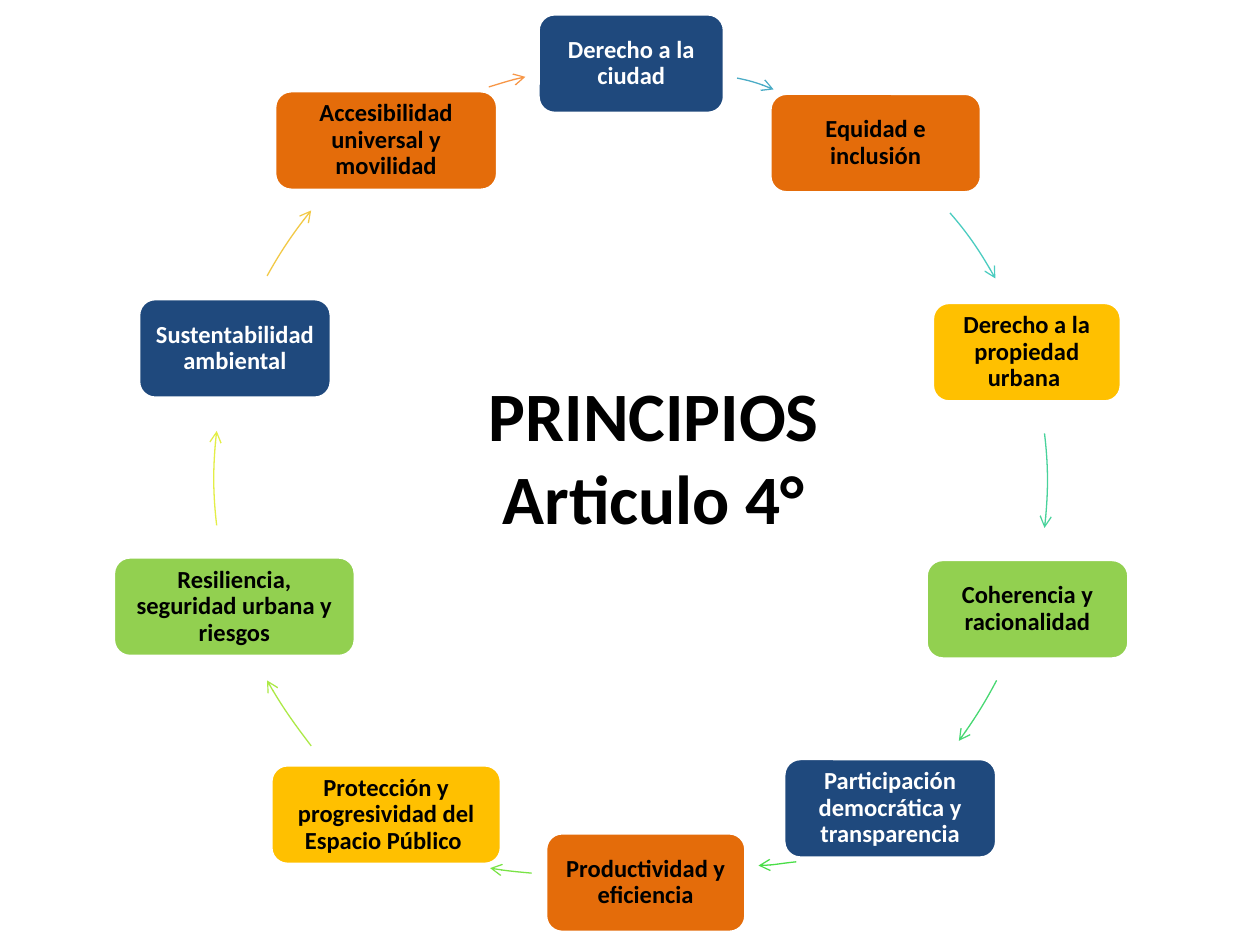
from lxml import etree
from pptx import Presentation
from pptx import util as u
from pptx.dml.color import RGBColor
from pptx.enum import shapes, text
from pptx.oxml.ns import qn

FONT = "Calibri"
BLUE, ORANGE, YELLOW, GREEN = "1F497D", "E46C0A", "FFC000", "92D050"
BLACK, WHITE = "000000", "FFFFFF"
CARD_HEIGHT = 0.79
RING_SIZE = 6.61

# label, fill, left, top, width
PRINCIPLES = [
    ("Derecho a la ciudad", BLUE, 4.27, 0.11, 1.48),
    ("Equidad e inclusión", ORANGE, 6.11, 0.74, 1.68),
    ("Derecho a la propiedad urbana ", YELLOW, 7.4, 2.4, 1.5),
    ("Coherencia y racionalidad", GREEN, 7.35, 4.44, 1.61),
    ("Participación democrática y transparencia", BLUE, 6.22, 6.02, 1.69),
    ("Productividad y eficiencia", ORANGE, 4.33, 6.61, 1.59),
    ("Protección y progresividad del Espacio Público ", YELLOW, 2.15, 6.07, 1.83),
    ("Resiliencia, seguridad urbana y riesgos", GREEN, 0.9, 4.42, 1.92),
    ("Sustentabilidad ambiental", BLUE, 1.1, 2.37, 1.53),
    ("Accesibilidad universal y movilidad", ORANGE, 2.18, 0.72, 1.77),
]

# colour, corner of the ring, then start, two control points and end on the slide
ARROWS = [
    ("4BACC6", (1.72, 0.52), (5.85, 0.62), (5.95, 0.64), (6.05, 0.67), (6.14, 0.71)),
    ("4ACCC0", (1.71, 0.52), (7.54, 1.69), (7.68, 1.85), (7.8, 2.03), (7.9, 2.21)),
    ("48D29B", (1.7, 0.53), (8.29, 3.44), (8.32, 3.69), (8.32, 3.94), (8.29, 4.19)),
    ("47D872", (1.67, 0.57), (7.91, 5.4), (7.82, 5.57), (7.72, 5.73), (7.61, 5.88)),
    ("49DE47", (2.46, 0.27), (6.32, 6.84), (6.22, 6.85), (6.12, 6.87), (6.02, 6.87)),
    ("79E346", (1.21, 0.33), (4.22, 6.93), (4.11, 6.92), (4, 6.91), (3.89, 6.89)),
    ("ACE946", (1.7, 0.49), (2.47, 5.92), (2.34, 5.75), (2.22, 5.58), (2.12, 5.4)),
    ("E3EE46", (1.7, 0.49), (1.72, 4.17), (1.69, 3.92), (1.69, 3.67), (1.72, 3.42)),
    ("F2C946", (1.7, 0.49), (2.12, 2.19), (2.22, 2.01), (2.34, 1.83), (2.47, 1.67)),
    ("F79646", (1.56, 0.54), (3.88, 0.69), (3.98, 0.66), (4.07, 0.63), (4.17, 0.61)),
]


def rgb(value):
    return RGBColor.from_string(value)


def write(sp, label, size, colour):
    tf = sp.text_frame
    tf.word_wrap = True
    tf.vertical_anchor = text.MSO_ANCHOR.MIDDLE
    p = tf.paragraphs[0]
    p.text = label
    p.alignment = text.PP_ALIGN.CENTER
    for r in p.runs:
        r.font.name = FONT
        r.font.size = u.Pt(size)
        r.font.bold = True
        r.font.color.rgb = rgb(colour)
    return tf


def add_card(s, label, fill, *box):
    sp = s.shapes.add_shape(shapes.MSO_SHAPE.ROUNDED_RECTANGLE, *map(u.Inches, box))
    sp.shadow.inherit = False
    sp.fill.solid()
    sp.fill.fore_color.rgb = rgb(fill)
    sp.line.color.rgb = rgb(WHITE)
    sp.line.width = u.Pt(2)
    tf = write(sp, label, 14, WHITE if fill == BLUE else BLACK)
    tf.margin_left = tf.margin_right = u.Inches(0.1)
    tf.margin_top = tf.margin_bottom = u.Inches(0.1)
    tf.paragraphs[0].line_spacing = 0.9


def add_curved_arrow(s, colour, corner, *points):
    """Draw one cubic curve with an open arrowhead, framed by its whole ring."""
    start, *curve = [tuple(map(u.Inches, point)) for point in points]
    builder = s.shapes.build_freeform(*start)
    builder.add_line_segments(curve, close=False)
    sp = builder.convert_to_shape()
    sp.shadow.inherit = False
    sp.fill.background()
    sp.line.color.rgb = rgb(colour)
    sp.line.width = u.Pt(0.75)

    path = next(sp.element.iter(qn("a:path")))
    bezier = etree.SubElement(path, qn("a:cubicBezTo"))
    for segment in path.findall(qn("a:lnTo")):
        bezier.append(segment[0])
        path.remove(segment)

    left, top = map(u.Inches, corner)
    size = u.Inches(RING_SIZE)
    for pt, (x, y) in zip(path.iter(qn("a:pt")), [start, *curve]):
        pt.set("x", str(x - left))
        pt.set("y", str(y - top))
    path.set("w", str(size))
    path.set("h", str(size))
    sp.left, sp.top, sp.width, sp.height = left, top, size, size

    ln = sp.element.spPr.find(qn("a:ln"))
    etree.SubElement(ln, qn("a:tailEnd"), type="arrow")


def add_cycle(s):
    for (label, fill, left, top, width), arrow in zip(PRINCIPLES, ARROWS):
        add_card(s, label, fill, left, top, width, CARD_HEIGHT)
        add_curved_arrow(s, *arrow)


def add_title(s, *box):
    sp = s.shapes.add_textbox(*map(u.Inches, box))
    write(sp, "PRINCIPIOS\vArticulo 4°", 39.6, BLACK)


def main():
    prs = Presentation()
    prs.slide_width, prs.slide_height = u.Inches(10), u.Inches(7.5)
    s = prs.slides.add_slide(prs.slide_layouts[6])
    add_cycle(s)
    add_title(s, 3.51, 2.99, 3.36, 1.25)
    prs.save("out.pptx")


if __name__ == "__main__":
    main()
